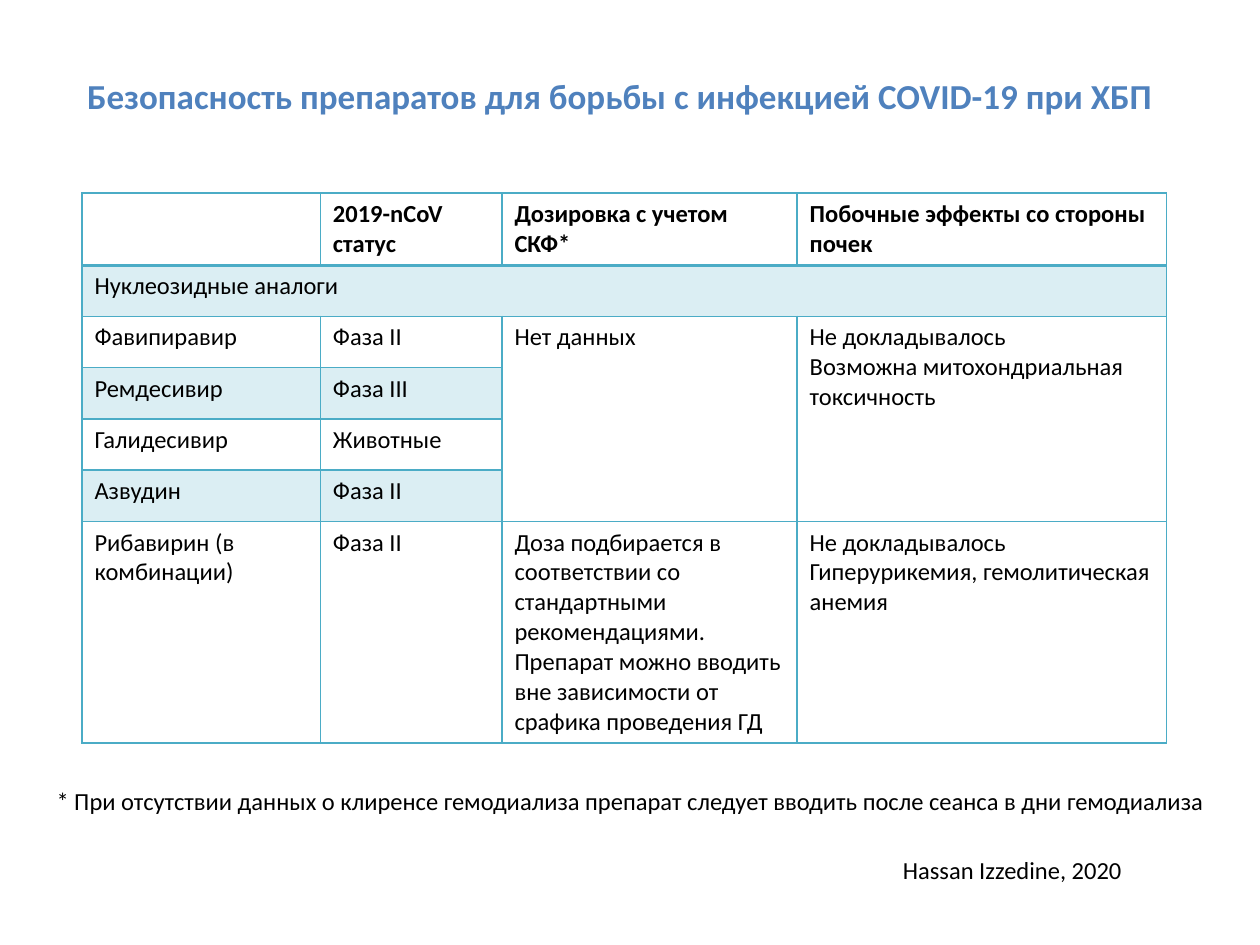
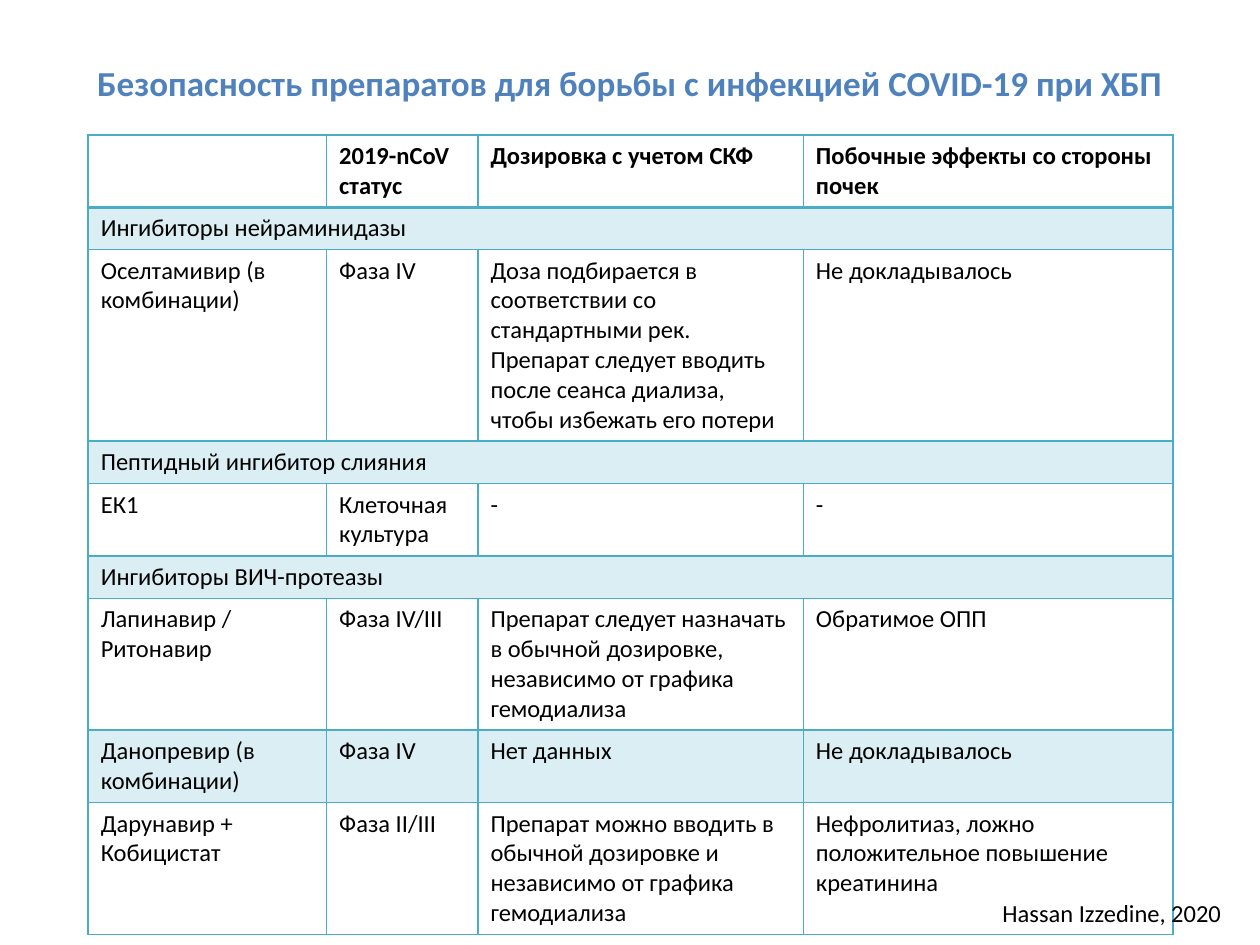
"""Build two slides on the safety of COVID-19 drugs in chronic kidney disease."""
from dataclasses import dataclass

from lxml.etree import SubElement
from pptx import Presentation
from pptx.dml.color import RGBColor
from pptx.enum.text import MSO_ANCHOR as Anchor, MSO_AUTO_SIZE as AutoSize, PP_ALIGN as Align
from pptx.oxml.ns import qn
from pptx.util import Inches, Pt

COLORS = {"title": "4F81BD", "text": "000000", "accent": "4BACC6"}
FONT = "Calibri"
BAND_OPACITY = 20
TITLE_ONLY = 5
SLIDE_WIDTH, SLIDE_HEIGHT = Inches(10), Inches(7.5)

TITLE = "Безопасность препаратов для борьбы с инфекцией COVID-19 при ХБП"
CITATION = "Hassan Izzedine, 2020"
FOOTNOTE = ("* При отсутствии данных о клиренсе гемодиализа препарат следует вводить "
            "после сеанса в дни гемодиализа")
STATUS, DOSE, EFFECTS = "2019-nCoV статус", "Дозировка с учетом СКФ", "Побочные эффекты со стороны почек"

# In table rows a single entry spans all columns and None continues the cell above.
NUCLEOSIDE_ROWS = [
    ("", STATUS, DOSE + "*", EFFECTS),
    ("Нуклеозидные аналоги",),
    ("Фавипиравир", "Фаза II", "Нет данных",
     "Не докладывалось\nВозможна митохондриальная токсичность"),
    ("Ремдесивир", "Фаза III", None, None),
    ("Галидесивир", "Животные", None, None),
    ("Азвудин", "Фаза II", None, None),
    ("Рибавирин (в комбинации)", "Фаза II",
     "Доза подбирается в соответствии со стандартными рекомендациями. "
     "Препарат можно вводить вне зависимости от срафика проведения ГД",
     "Не докладывалось\nГиперурикемия, гемолитическая анемия"),
]
INHIBITOR_ROWS = [
    ("", STATUS, DOSE, EFFECTS),
    ("Ингибиторы нейраминидазы",),
    ("Оселтамивир (в комбинации)", "Фаза IV",
     "Доза подбирается в соответствии со стандартными рек.\n"
     "Препарат следует вводить после сеанса диализа, чтобы избежать его потери",
     "Не докладывалось"),
    ("Пептидный ингибитор слияния",),
    ("ЕК1", "Клеточная культура", "-", "-"),
    ("Ингибиторы ВИЧ-протеазы",),
    ("Лапинавир / Ритонавир", "Фаза IV/III",
     "Препарат следует назначать в обычной дозировке, независимо от графика гемодиализа",
     "Обратимое ОПП"),
    ("Данопревир (в комбинации)", "Фаза IV", "Нет данных", "Не докладывалось"),
    ("Дарунавир +\nКобицистат", "Фаза II/III",
     "Препарат можно вводить в обычной дозировке и независимо от графика гемодиализа",
     "Нефролитиаз, ложно положительное повышение креатинина"),
]


@dataclass
class Box:
    """A region given in percent of the slide's width and height."""
    left: float
    top: float
    width: float
    height: float

    def lengths(self):
        """Return left, top, width and height as slide lengths."""
        return (int(SLIDE_WIDTH * self.left / 100), int(SLIDE_HEIGHT * self.top / 100),
                int(SLIDE_WIDTH * self.width / 100), int(SLIDE_HEIGHT * self.height / 100))


def write_text(frame, text, size=14, bold=False, color="text", align=None):
    """Write one paragraph per line of text in the given format."""
    for index, line in enumerate(text.split("\n")):
        paragraph = frame.add_paragraph() if index else frame.paragraphs[0]
        if align is not None:
            paragraph.alignment = align
        run = paragraph.add_run()
        run.text = line
        run.font.name, run.font.size, run.font.bold = FONT, Pt(size), bold
        run.font.color.rgb = RGBColor.from_string(COLORS[color])


def add_title(slide, box):
    """Place and format the title placeholder."""
    title = slide.shapes.title
    title.left, title.top, title.width, title.height = box.lengths()
    frame = title.text_frame
    frame.word_wrap, frame.auto_size = True, AutoSize.NONE
    frame.vertical_anchor = Anchor.TOP
    write_text(frame, TITLE, size=20, bold=True, color="title", align=Align.CENTER)


def add_caption(slide, box, text, **text_format):
    """Add a wrapped line of text below the table."""
    frame = slide.shapes.add_textbox(*box.lengths()).text_frame
    frame.word_wrap = True
    write_text(frame, text, **text_format)


def draw_borders(cell, row):
    """Outline a cell, with a heavier rule under the header row."""
    widths = {"L": 1, "R": 1, "T": 2 if row == 1 else 1, "B": 2 if row == 0 else 1}
    properties = cell._tc.get_or_add_tcPr()
    for side, width in widths.items():
        line = SubElement(properties, qn(f"a:ln{side}"), w=str(Pt(width)))
        fill = SubElement(line, qn("a:solidFill"))
        SubElement(fill, qn("a:srgbClr"), val=COLORS["accent"])


def fill_cell(cell, banded):
    """Tint a banded cell and leave any other clear."""
    if not banded:
        cell.fill.background()
        return
    cell.fill.solid()
    cell.fill.fore_color.rgb = RGBColor.from_string(COLORS["accent"])
    color = cell._tc.tcPr.find(qn("a:solidFill")).find(qn("a:srgbClr"))
    SubElement(color, qn("a:alpha"), val=str(BAND_OPACITY * 1000))


def merge_cells(table, rows):
    """Merge section rows across and continued cells downwards."""
    last_column = len(table.columns) - 1
    for row, texts in enumerate(rows):
        if len(texts) == 1:
            table.cell(row, 0).merge(table.cell(row, last_column))
            continue
        for column, text in enumerate(texts):
            end = row
            while end + 1 < len(rows) and rows[end + 1][column:column + 1] == (None,):
                end += 1
            if text is not None and end > row:
                table.cell(row, column).merge(table.cell(end, column))


def add_drug_table(slide, box, rows, column_weights, row_weights):
    """Add a table of drugs whose columns and rows share the box by weight."""
    left, top, width, height = box.lengths()
    table = slide.shapes.add_table(len(rows), len(column_weights), left, top, width, height).table
    table.first_row = table.horz_banding = False
    for column, weight in zip(table.columns, column_weights):
        column.width = int(width * weight / sum(column_weights))
    for row, weight in zip(table.rows, row_weights):
        row.height = int(height * weight / sum(row_weights))
    merge_cells(table, rows)
    for row, texts in enumerate(rows):
        for column in range(len(column_weights)):
            cell = table.cell(row, column)
            draw_borders(cell, row)
            fill_cell(cell, row % 2 == 1 and not cell.is_spanned)
            if not cell.is_spanned and texts[column]:
                write_text(cell.text_frame, texts[column], bold=row == 0)


def build_nucleoside_slide(slide):
    """Build the slide on nucleoside analogues."""
    add_title(slide, Box(5.1, 7.2, 88.2, 5.87))
    add_drug_table(slide, Box(6.5, 20.4, 86.1, 57.73), NUCLEOSIDE_ROWS,
                   (1.89, 1.44, 2.34, 2.93), (0.57, *[0.41] * 5, 1.74))
    add_caption(slide, Box(3.5, 82.53, 94.5, 4.53), FOOTNOTE)
    add_caption(slide, Box(69.7, 89.87, 21.3, 4.53), CITATION, align=Align.CENTER)


def build_inhibitor_slide(slide):
    """Build the slide on neuraminidase, fusion and protease inhibitors."""
    add_title(slide, Box(5.9, 5.87, 88.2, 5.87))
    add_drug_table(slide, Box(7, 14.27, 86.1, 83.6), INHIBITOR_ROWS,
                   (1.89, 1.2, 2.58, 2.93),
                   (0.57, 0.33, 1.5, 0.33, 0.57, 0.33, 1.04, 0.57, 1.04))
    add_caption(slide, Box(77.6, 94.4, 21.3, 4.53), CITATION, align=Align.CENTER)


def main():
    """Build and save the presentation."""
    presentation = Presentation()
    presentation.slide_width, presentation.slide_height = SLIDE_WIDTH, SLIDE_HEIGHT
    for build in (build_nucleoside_slide, build_inhibitor_slide):
        build(presentation.slides.add_slide(presentation.slide_layouts[TITLE_ONLY]))
    presentation.save("out.pptx")


if __name__ == "__main__":
    main()
